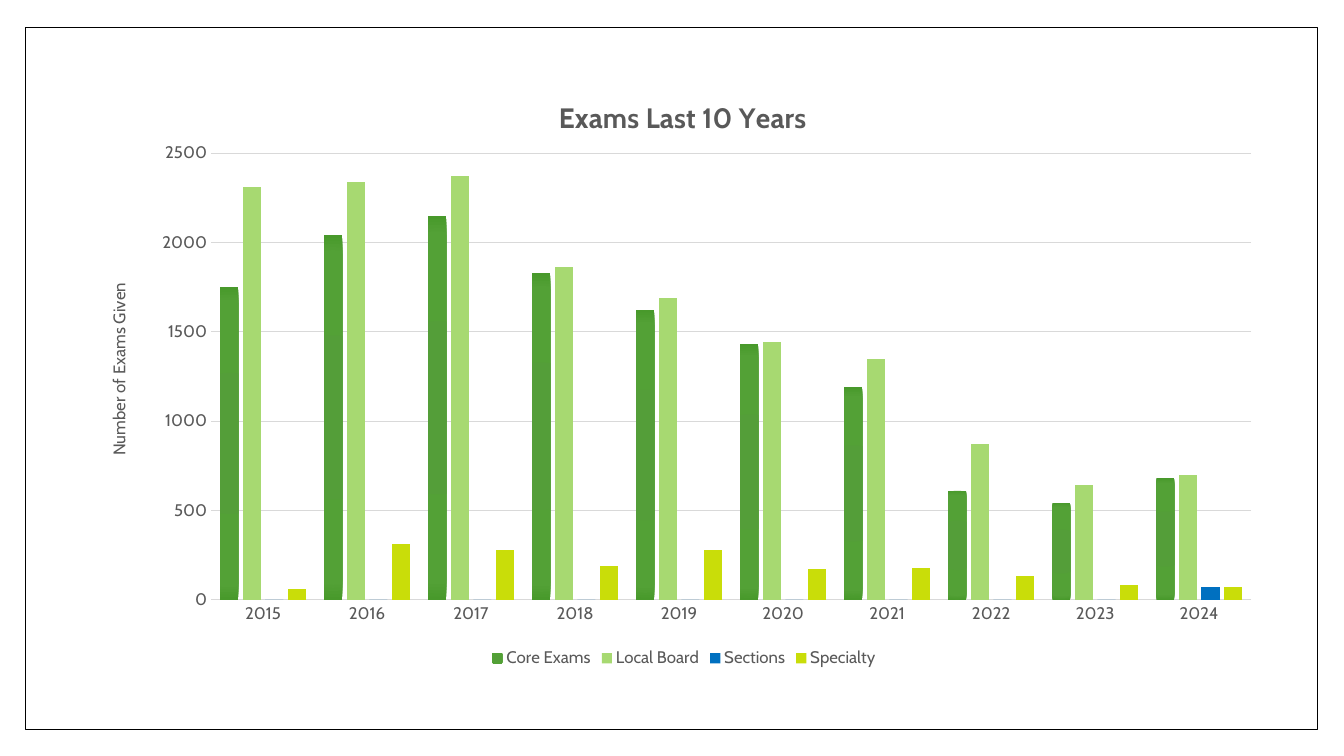
from dataclasses import dataclass
from lxml.etree import SubElement as Sub
from pptx import Presentation
from pptx.chart.data import CategoryChartData as Data
from pptx.dml.color import RGBColor as Color
from pptx.enum.chart import XL_CHART_TYPE as Kind, XL_LEGEND_POSITION as Spot, XL_TICK_MARK as Tick
from pptx.enum.shapes import MSO_SHAPE as Form
from pptx.oxml.ns import qn
from pptx.util import Cm, Pt


@dataclass(frozen=True)
class Theme:
    face: str = "Cabin"
    white: str = "FFFFFF"
    black: str = "000000"
    gray: str = "595959"
    rule: str = "D9D9D9"
    glow: tuple = ((0, "549E39"), (90, "53A136"), (100, "48992B"))
    light: str = "A7D971"
    blue: str = "0070C0"
    lime: str = "C9DD09"
    head: int = 20
    body: int = 12
    base: int = 10


def style(font, face, size, color, bold=False):
    font.name, font.size, font.bold = face, Pt(size), bold
    font.color.rgb = Color.from_string(color)


def write(frame, text, **form):
    run = frame.paragraphs[0].add_run()
    run.text = text
    style(run.font, **form)


def stroke(line, color, width):
    line.color.rgb = Color.from_string(color)
    line.width = Pt(width)


def place(node, index, **rates):
    for old in node.findall(qn("c:layout")):
        node.remove(old)
    layout = node.makeelement(qn("c:layout"))
    node.insert(index, layout)
    manual = Sub(layout, qn("c:manualLayout"))
    if "w" in rates:
        Sub(manual, qn("c:layoutTarget"), val="inner")
    for mode in ("xMode", "yMode"):
        Sub(manual, qn(f"c:{mode}"), val="edge")
    for key, rate in rates.items():
        Sub(manual, qn(f"c:{key}"), val=str(rate))


def shade(fill, stops):
    fill.solid()
    fill.fore_color.rgb = Color.from_string(stops[0][1])
    old = fill._xPr.find(qn("a:solidFill"))
    grad = old.makeelement(qn("a:gradFill"), rotWithShape="1")
    old.getparent().replace(old, grad)
    group = Sub(grad, qn("a:gsLst"))
    for spot, color in stops:
        stop = Sub(group, qn("a:gs"), pos=str(spot * 1000))
        Sub(stop, qn("a:srgbClr"), val=color)
    shape = Sub(grad, qn("a:path"), path="circle")
    Sub(shape, qn("a:fillToRect"), **dict.fromkeys("ltrb", "100000"))


class Deck:
    """Build chart slides in one shared style."""

    def __init__(self, theme):
        self.theme = theme
        self.show = Presentation()
        self.show.slide_width, self.show.slide_height = Cm(33.87), Cm(19.05)
        self.slide = self.show.slides.add_slide(self.show.slide_layouts[6])

    def form(self, size, **more):
        return dict(face=self.theme.face, size=size, color=self.theme.gray, **more)

    def border(self, *box):
        shape = self.slide.shapes.add_shape(Form.RECTANGLE, *map(Cm, box))
        shape.shadow.inherit = False
        shape.fill.solid()
        shape.fill.fore_color.rgb = Color.from_string(self.theme.white)
        stroke(shape.line, self.theme.black, 1)

    def columns(self, box, title, label, years, table):
        data = Data()
        data.categories = years
        for name, (_, values) in table.items():
            data.add_series(name, values)
        chart = self.slide.shapes.add_chart(Kind.COLUMN_CLUSTERED, *map(Cm, box), data).chart
        style(chart.font, self.theme.face, self.theme.base, self.theme.black)
        write(chart.chart_title.text_frame, title, **self.form(self.theme.head, bold=True))
        place(chart.chart_title._element, 1, x=0.39, y=0.04)
        chart.chart_title.include_in_layout = False
        chart.has_legend = True
        chart.legend.position = Spot.BOTTOM
        chart.legend.include_in_layout = False
        style(chart.legend.font, **self.form(self.theme.body))
        self.axes(chart, label)
        plot = chart.plots[0]
        plot.gap_width, plot.overlap, plot.vary_by_categories = 100, -24, False
        for series, (paint, _) in zip(plot.series, table.values()):
            fill = series.format.fill
            if isinstance(paint, tuple):
                shade(fill, paint)
            else:
                fill.solid()
                fill.fore_color.rgb = Color.from_string(paint)
        area = chart._chartSpace.find(".//" + qn("c:plotArea"))
        place(area, 0, x=0.1, y=0.14, w=0.88, h=0.74)

    def axes(self, chart, label):
        years, count = chart.category_axis, chart.value_axis
        for axis in (years, count):
            axis.major_tick_mark = axis.minor_tick_mark = Tick.NONE
            style(axis.tick_labels.font, **self.form(self.theme.body))
        stroke(years.format.line, self.theme.rule, 1)
        count.format.line.fill.background()
        count.minimum_scale, count.maximum_scale, count.major_unit = 0, 2500, 500
        stroke(count.major_gridlines.format.line, self.theme.rule, 0.75)
        write(count.axis_title.text_frame, label, **self.form(self.theme.body))
        place(count.axis_title._element, 1, x=0.01, y=0.35)

    def save(self):
        self.show.save("out.pptx")


def main():
    theme = Theme()
    deck = Deck(theme)
    deck.border(0.64, 0.69, 32.56, 17.7)
    table = {
        "Core Exams": (theme.glow, (1750, 2040, 2150, 1830, 1620, 1430, 1190, 610, 540, 680)),
        "Local Board": (theme.light, (2310, 2340, 2370, 1860, 1690, 1440, 1350, 870, 640, 700)),
        "Sections": (theme.blue, (0,) * 9 + (70,)),
        "Specialty": (theme.lime, (60, 310, 280, 190, 280, 170, 180, 130, 80, 70)),
    }
    years = [str(year) for year in range(2015, 2025)]
    deck.columns((2.34, 1.73, 29.79, 15.21), "Exams Last 10 Years",
                 "Number of Exams Given", years, table)
    deck.save()


if __name__ == "__main__":
    main()
